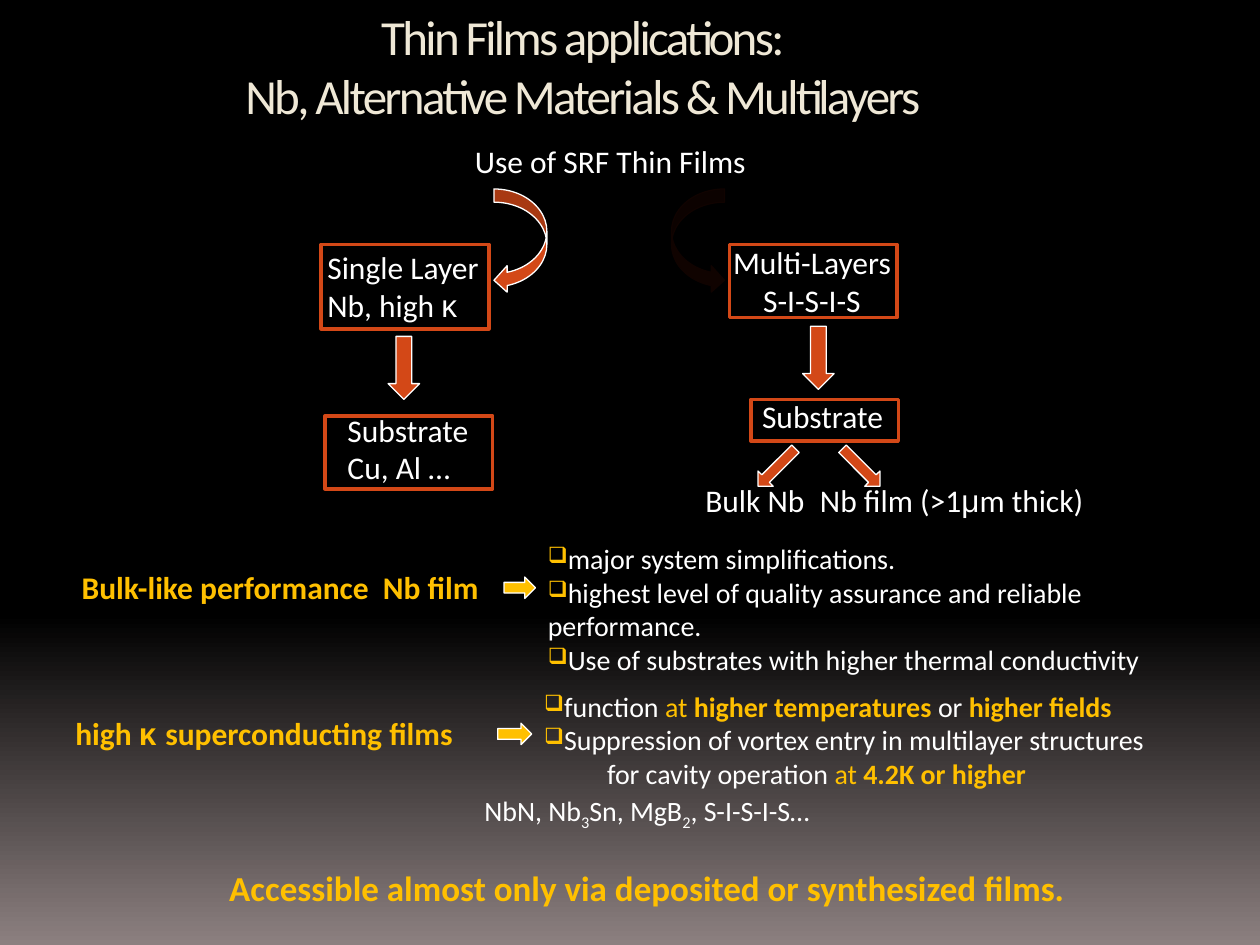
"""Build a slide on thin film applications as a flow chart with bullet notes."""
from lxml.etree import SubElement
from pptx import Presentation
from pptx.dml.color import RGBColor
from pptx.enum.shapes import MSO_SHAPE as Kind
from pptx.enum.text import MSO_ANCHOR, MSO_AUTO_SIZE, PP_ALIGN as Align
from pptx.oxml.ns import qn
from pptx.util import Inches, Pt

WHITE = RGBColor(0xFF, 0xFF, 0xFF)
BLACK = RGBColor(0, 0, 0)
GRAY = RGBColor(0x8C, 0x80, 0x80)
CREAM = RGBColor(0xEF, 0xE8, 0xD6)
GOLD = RGBColor(0xFF, 0xC0, 0x00)
RUST = RGBColor(0xD3, 0x48, 0x17)
DARK = RGBColor(0x10, 0x03, 0x00)

GREEK = {"name": "Arial"}
AMBER = {"color": GOLD}
STRONG = {"color": GOLD, "bold": True}
SUB = {"baseline": -25000}
HEAD = {"size": 28, "color": CREAM, "spc": -150}
NOTE = {"size": 16}
CLOSE = {"size": 20, **STRONG}

TITLE = [["Thin Films applications:", "\n",
          "Nb, Alternative Materials & Multilayers"]]

LABELS = [
    ((3.67, 1.08, 2.38, 0.4), [["Use of SRF Thin Films"]], {}, {}),
    ((5.5, 3.77, 1, 0.4), [["Bulk Nb"]], {}, {}),
    ((6.41, 3.77, 2.37, 0.4),
     [["Nb film (>1", ("μ", GREEK), "m thick)"]], {}, {}),
    ((5.71, 1.88, 1.47, 0.71), [["Multi-Layers"], ["S-I-S-I-S"]],
     {}, {"align": Align.CENTER}),
    ((5.95, 3.1, 1.17, 0.4), [["Substrate"]], {}, {}),
    ((2.66, 3.21, 1.17, 0.71), [["Substrate"], ["Cu, Al …"]], {}, {}),
    ((2.5, 1.92, 1.43, 0.71),
     [["Single Layer"], ["Nb, high ", ("κ", GREEK)]], {}, {}),
    ((0.55, 4.46, 3.56, 0.4),
     [["Bulk-like performance  Nb film"]], STRONG, {}),
    ((0.5, 5.62, 3.34, 0.4),
     [["high ", ("κ ", GREEK), "superconducting films"]], STRONG, {}),
    ((4.25, 4.25, 5.5, 1.18),
     [["major system simplifications."],
      ["highest level of quality assurance and reliable performance."],
      ["Use of substrates with higher thermal conductivity"]],
     NOTE, {"wrap": True, "bullets": 3}),
    ((4.22, 5.42, 5.45, 0.91),
     [["function ", ("at ", AMBER), ("higher temperatures ", STRONG), "or ",
       ("higher fields", STRONG)],
      ["Suppression of vortex entry in multilayer structures"],
      ["\tfor cavity operation ", ("at ", AMBER),
       ("4.2K or higher", STRONG)]],
     NOTE, {"wrap": True, "bullets": 2}),
    ((0.33, 6.25, 9.11, 1.21),
     [["NbN, Nb", ("3", SUB), "Sn, MgB", ("2", SUB), ", S-I-S-I-S…"],
      [("Accessible almost only via deposited or synthesized films.", CLOSE)]],
     NOTE, {"wrap": True, "align": Align.CENTER, "left": 0.5, "gap": 19.5}),
]

BOXES = [(5.79, 1.94, 1.33, 0.58), (5.96, 3.17, 1.17, 0.33),
         (2.55, 1.94, 1.33, 0.67), (2.58, 3.3, 1.33, 0.58)]

ARROWS = [
    (Kind.CURVED_LEFT_ARROW, (3.92, 1.5, 0.42, 0.83), RUST, WHITE, 0, False),
    (Kind.CURVED_LEFT_ARROW, (5.33, 1.5, 0.42, 0.83), DARK, DARK, 0, True),
    (Kind.DOWN_ARROW, (6.37, 2.59, 0.25, 0.5), RUST, WHITE, 0, False),
    (Kind.DOWN_ARROW, (3.08, 2.67, 0.25, 0.5), RUST, WHITE, 0, False),
    (Kind.DOWN_ARROW, (6.75, 3.5, 0.17, 0.42), RUST, WHITE, -45, False),
    (Kind.DOWN_ARROW, (6.08, 3.5, 0.17, 0.42), RUST, WHITE, 45, False),
    (Kind.RIGHT_ARROW, (4, 4.58, 0.25, 0.17), GOLD, WHITE, 0, False),
    (Kind.RIGHT_ARROW, (3.95, 5.74, 0.27, 0.17), GOLD, WHITE, 0, False),
]


def style(run, values):
    form = {"name": "Calibri", "size": 18, "color": WHITE, "bold": False,
            **values}
    for key, val in form.items():
        if key == "color":
            run.font.color.rgb = val
        elif key in ("baseline", "spc"):
            run._r.get_or_add_rPr().set(key, str(val))
        else:
            setattr(run.font, key, Pt(val) if key == "size" else val)


def mark(para):
    props = para._p.get_or_add_pPr()
    tint = SubElement(SubElement(props, qn("a:buClr")), qn("a:srgbClr"))
    tint.set("val", str(GOLD))
    SubElement(props, qn("a:buSzPct")).set("val", "80000")
    SubElement(props, qn("a:buChar")).set("char", "❑")


def write(frame, paras, base, align=Align.LEFT, wrap=False, bullets=0,
          left=0, gap=0):
    frame.word_wrap = wrap
    for i, parts in enumerate(paras):
        para = frame.add_paragraph() if i else frame.paragraphs[0]
        para.alignment = align
        if left:
            para._p.get_or_add_pPr().set("marL", str(Inches(left)))
        if i and gap:
            para.space_before = Pt(gap)
        if i < bullets:
            mark(para)
        for part in parts:
            if part == "\n":
                para.add_line_break()
                continue
            text, extra = (part, {}) if isinstance(part, str) else part
            run = para.add_run()
            run.text = text
            style(run, {**base, **extra})


def draw(slide, kind, place, fill, line, width):
    shape = slide.shapes.add_shape(kind, *map(Inches, place))
    shape.shadow.inherit = False
    if fill is None:
        shape.fill.background()
    else:
        shape.fill.solid()
        shape.fill.fore_color.rgb = fill
    shape.line.color.rgb = line
    shape.line.width = Pt(width)
    return shape


def main():
    deck = Presentation()
    deck.slide_width, deck.slide_height = Inches(10), Inches(7.5)
    slide = deck.slides.add_slide(deck.slide_layouts[5])

    back = slide.background.fill
    back.gradient()
    back.gradient_angle = 270
    for stop, spot, color in zip(back.gradient_stops, (0.65, 1),
                                 (BLACK, GRAY)):
        stop.position = spot
        stop.color.rgb = color

    title = slide.shapes.title
    title.left, title.top, title.width, title.height = map(
        Inches, (0, 0, 9.25, 0.67))
    title.text_frame.vertical_anchor = MSO_ANCHOR.TOP
    title.text_frame.auto_size = MSO_AUTO_SIZE.NONE
    write(title.text_frame, TITLE, HEAD, Align.CENTER, True)

    for kind, place, fill, line, turn, flip in ARROWS:
        arrow = draw(slide, kind, place, fill, line, 0.75)
        arrow.rotation = turn
        if flip:
            arrow._element.spPr.xfrm.set("flipH", "1")
    for place in BOXES:
        draw(slide, Kind.FLOWCHART_PROCESS, place, None, RUST, 2)
    for place, paras, base, opts in LABELS:
        box = slide.shapes.add_textbox(*map(Inches, place))
        write(box.text_frame, paras, base, **opts)

    deck.save("out.pptx")


if __name__ == "__main__":
    main()
